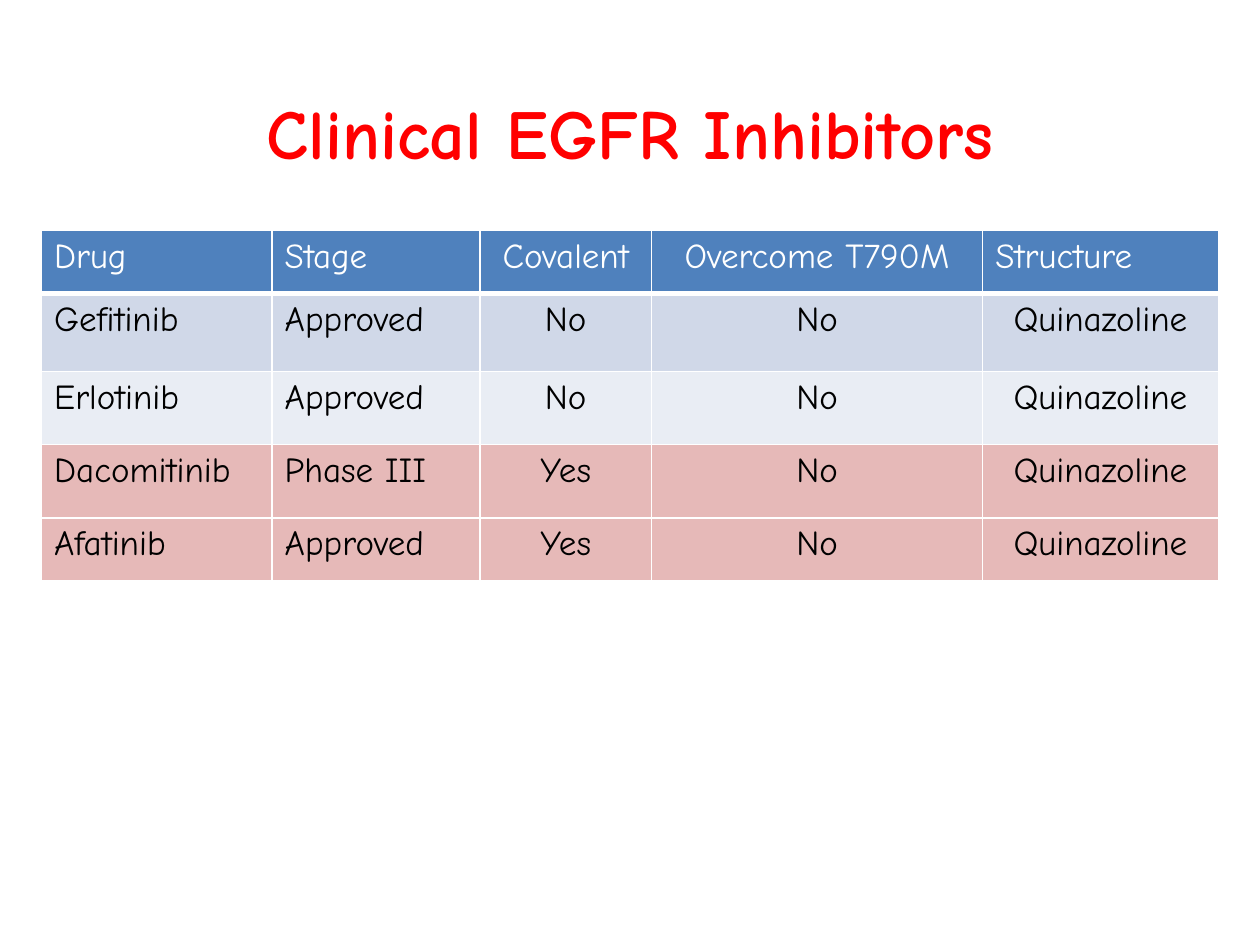
from dataclasses import dataclass

from lxml.etree import SubElement
from pptx import Presentation
from pptx.dml.color import RGBColor
from pptx.enum.text import MSO_ANCHOR, PP_ALIGN as Align
from pptx.oxml.ns import qn
from pptx.util import Inches, Pt

FONT = "Comic Neue"
WHITE, BLACK, RED = "FFFFFF", "000000", "FF0000"
HEADER_BLUE, PALE_BLUE, PALER_BLUE, PINK = "4F81BD", "D0D8E8", "E9EDF4", "E6B9B8"


@dataclass(frozen=True)
class Column:
    heading: str
    width: float
    heading_align: Align
    body_align: Align


@dataclass(frozen=True)
class Row:
    values: tuple[str, ...]
    height: float
    fill: str
    ink: str = BLACK


COLUMNS = (
    Column("Drug", 1.83, Align.LEFT, Align.LEFT),
    Column("Stage", 1.65, Align.LEFT, Align.LEFT),
    Column("Covalent", 1.36, Align.CENTER, Align.CENTER),
    Column("Overcome T790M", 2.63, Align.CENTER, Align.CENTER),
    Column("Structure", 1.87, Align.LEFT, Align.CENTER),
)
ROWS = (
    Row(tuple(column.heading for column in COLUMNS), 0.5, HEADER_BLUE, WHITE),
    Row(("Gefitinib", "Approved", "No", "No", "Quinazoline"), 0.62, PALE_BLUE),
    Row(("Erlotinib", "Approved", "No", "No", "Quinazoline"), 0.58, PALER_BLUE),
    Row(("Dacomitinib", "Phase III", "Yes", "No", "Quinazoline"), 0.58, PINK),
    Row(("Afatinib", "Approved", "Yes", "No", "Quinazoline"), 0.5, PINK),
)


def rgb(value: str) -> RGBColor:
    return RGBColor.from_string(value)


def write(frame, text: str, size: float, ink: str, align: Align, bold: bool = False) -> None:
    frame.text = text
    paragraph = frame.paragraphs[0]
    paragraph.alignment = align
    font = paragraph.runs[0].font
    font.name, font.size, font.bold = FONT, Pt(size), bold
    font.color.rgb = rgb(ink)


def add_borders(cell, widths: dict[str, float]) -> None:
    """Add white cell borders; call before the fill, which must follow them."""
    properties = cell._tc.get_or_add_tcPr()
    for side, width in widths.items():
        line = SubElement(properties, qn(f"a:ln{side}"), w=str(Pt(width)))
        SubElement(SubElement(line, qn("a:solidFill")), qn("a:srgbClr"), val=WHITE)


def add_title(slide, text: str) -> None:
    title = slide.shapes.add_textbox(Inches(0.5), Inches(0.58), Inches(9), Inches(0.92))
    title.text_frame.word_wrap = True
    title.text_frame.vertical_anchor = MSO_ANCHOR.MIDDLE
    write(title.text_frame, text, 40, RED, Align.CENTER, bold=True)


def add_drug_table(slide) -> None:
    width = sum(column.width for column in COLUMNS)
    height = sum(row.height for row in ROWS)
    table = slide.shapes.add_table(
        len(ROWS), len(COLUMNS), Inches(0.33), Inches(1.83), Inches(width), Inches(height)
    ).table
    for index, column in enumerate(COLUMNS):
        table.columns[index].width = Inches(column.width)
    for row_index, row in enumerate(ROWS):
        table.rows[row_index].height = Inches(row.height)
        is_header = row_index == 0
        top = 3 if row_index == 1 else 1
        borders = {"L": 1, "R": 1, "T": top, "B": 3 if is_header else 1}
        for column_index, (column, value) in enumerate(zip(COLUMNS, row.values)):
            cell = table.cell(row_index, column_index)
            align = column.heading_align if is_header else column.body_align
            write(cell.text_frame, value, 20, row.ink, align)
            add_borders(cell, borders)
            cell.fill.solid()
            cell.fill.fore_color.rgb = rgb(row.fill)


def main() -> None:
    deck = Presentation()
    deck.slide_width, deck.slide_height = Inches(10), Inches(7.5)
    slide = deck.slides.add_slide(deck.slide_layouts[6])
    add_title(slide, "Clinical EGFR Inhibitors")
    add_drug_table(slide)
    deck.save("out.pptx")


if __name__ == "__main__":
    main()
